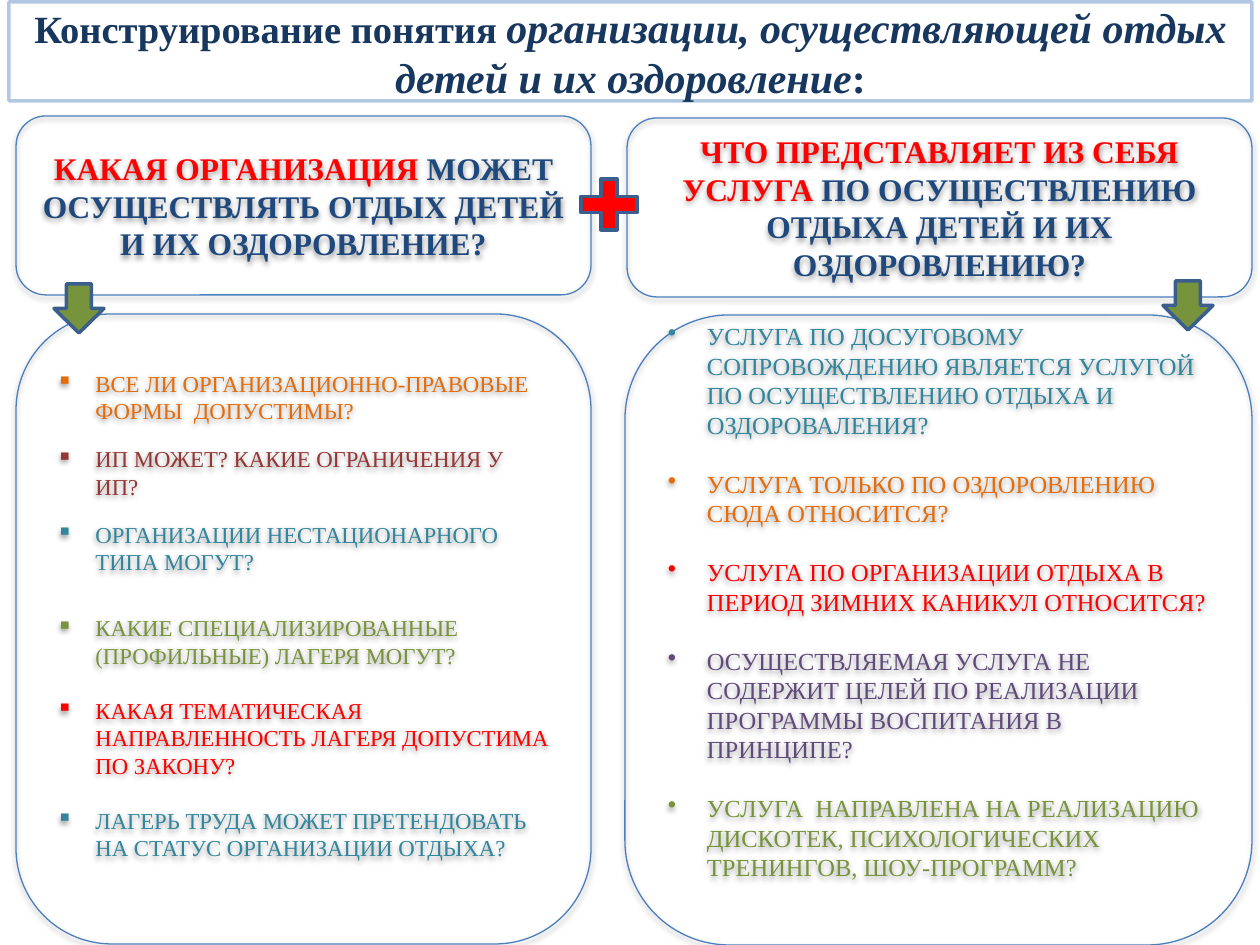
import pptx
import pptx.util
import pptx.dml.color
import pptx.enum.shapes
import pptx.enum.text
import lxml.etree

PX = 914400 / 126
SHAPES = pptx.enum.shapes.MSO_SHAPE
COLORS = {
    "white": "FFFFFF", "navy": "17375E", "blue": "1F497D", "frame": "4F81BD",
    "outline": "4B7EBC", "icon_line": "3A5F8C", "red": "FF0000",
    "orange": "E46C0A", "maroon": "953735", "teal": "31859C",
    "green": "77933C", "purple": "604A7B",
}


def rgb(name):
    return pptx.dml.color.RGBColor.from_string(COLORS[name])


def add_box(kind, bounds, fill, line, line_width, shadow=False):
    shape = slide.shapes.add_shape(kind, *[round(value * PX) for value in bounds])
    shape.shadow.inherit = False
    if fill:
        shape.fill.solid()
        shape.fill.fore_color.rgb = rgb(fill)
    else:
        shape.fill.background()
    shape.line.color.rgb = rgb(line)
    shape.line.width = pptx.util.Pt(line_width)
    shape.text_frame.word_wrap = True
    shape.text_frame.vertical_anchor = pptx.enum.text.MSO_ANCHOR.MIDDLE
    if shadow:
        effects = shape._element.spPr.find(pptx.oxml.ns.qn("a:effectLst"))
        outer = lxml.etree.SubElement(
            effects, pptx.oxml.ns.qn("a:outerShdw"),
            blurRad="40000", dist="20000", dir="5400000", rotWithShape="0")
        color = lxml.etree.SubElement(outer, pptx.oxml.ns.qn("a:srgbClr"), val="000000")
        lxml.etree.SubElement(color, pptx.oxml.ns.qn("a:alpha"), val="38000")
    return shape


presentation = pptx.Presentation()
presentation.slide_width = round(1260 * PX)
presentation.slide_height = round(945 * PX)
slide = presentation.slides.add_slide(presentation.slide_layouts[6])

title = add_box(SHAPES.RECTANGLE, (9, 2, 1243, 99), "white", "frame", 2)
frame_color = title.line._ln.find(".//" + pptx.oxml.ns.qn("a:srgbClr"))
lxml.etree.SubElement(frame_color, pptx.oxml.ns.qn("a:alpha"), val="43000")
paragraph = title.text_frame.paragraphs[0]
paragraph.alignment = pptx.enum.text.PP_ALIGN.CENTER
paragraph.font.name = "Times New Roman"
paragraph.font.bold = True
paragraph.font.color.rgb = rgb("navy")
for text, size, italic in [
    ("Конструирование понятия ", 22, False),
    ("организации, осуществляющей отдых детей и их оздоровление", 24, True),
    (":", 24, False),
]:
    run = paragraph.add_run()
    run.text = text
    run.font.size = pptx.util.Pt(size)
    run.font.italic = italic

questions = [
    ((16, 116, 575, 179), "КАКАЯ ОРГАНИЗАЦИЯ ",
     "МОЖЕТ ОСУЩЕСТВЛЯТЬ ОТДЫХ ДЕТЕЙ И ИХ ОЗДОРОВЛЕНИЕ?"),
    ((627, 118, 625, 179), "ЧТО ПРЕДСТАВЛЯЕТ ИЗ СЕБЯ УСЛУГА ",
     "ПО ОСУЩЕСТВЛЕНИЮ ОТДЫХА ДЕТЕЙ И ИХ ОЗДОРОВЛЕНИЮ?"),
]
for bounds, emphasis, remainder in questions:
    shape = add_box(SHAPES.ROUNDED_RECTANGLE, bounds, None, "outline", 0.75, True)
    paragraph = shape.text_frame.paragraphs[0]
    paragraph.alignment = pptx.enum.text.PP_ALIGN.CENTER
    paragraph.font.name = "Times New Roman"
    paragraph.font.size = pptx.util.Pt(18)
    paragraph.font.bold = True
    for text, color in [(emphasis, "red"), (remainder, "blue")]:
        run = paragraph.add_run()
        run.text = text
        run.font.color.rgb = rgb(color)

details = [
    ((16, 314, 575, 630), 13, "▪", 27, [
        ("ВСЕ ЛИ ОРГАНИЗАЦИОННО-ПРАВОВЫЕ ФОРМЫ  ДОПУСТИМЫ?", "orange", 12),
        ("ИП МОЖЕТ? КАКИЕ ОГРАНИЧЕНИЯ У ИП?", "maroon", 12),
        ("ОРГАНИЗАЦИИ НЕСТАЦИОНАРНОГО ТИПА МОГУТ?", "teal", 22),
        ("КАКИЕ СПЕЦИАЛИЗИРОВАННЫЕ (ПРОФИЛЬНЫЕ) ЛАГЕРЯ МОГУТ?", "green", 16),
        ("КАКАЯ ТЕМАТИЧЕСКАЯ НАПРАВЛЕННОСТЬ ЛАГЕРЯ ДОПУСТИМА ПО ЗАКОНУ?", "red", 16),
        ("ЛАГЕРЬ ТРУДА МОЖЕТ ПРЕТЕНДОВАТЬ НА СТАТУС ОРГАНИЗАЦИИ ОТДЫХА?", "teal", 0),
    ]),
    ((625, 315, 627, 630), 14, "•", 57, [
        ("УСЛУГА ПО ДОСУГОВОМУ СОПРОВОЖДЕНИЮ ЯВЛЯЕТСЯ УСЛУГОЙ "
         "ПО ОСУЩЕСТВЛЕНИЮ ОТДЫХА И ОЗДОРОВАЛЕНИЯ?", "teal", 17),
        ("УСЛУГА ТОЛЬКО ПО ОЗДОРОВЛЕНИЮ СЮДА ОТНОСИТСЯ?", "orange", 17),
        ("УСЛУГА ПО ОРГАНИЗАЦИИ ОТДЫХА В ПЕРИОД ЗИМНИХ КАНИКУЛ ОТНОСИТСЯ?", "red", 17),
        ("ОСУЩЕСТВЛЯЕМАЯ УСЛУГА НЕ СОДЕРЖИТ ЦЕЛЕЙ ПО РЕАЛИЗАЦИИ "
         "ПРОГРАММЫ ВОСПИТАНИЯ В ПРИНЦИПЕ?", "purple", 17),
        ("УСЛУГА  НАПРАВЛЕНА НА РЕАЛИЗАЦИЮ ДИСКОТЕК, ПСИХОЛОГИЧЕСКИХ "
         "ТРЕНИНГОВ, ШОУ-ПРОГРАММ?", "green", 0),
    ]),
]
for bounds, size, bullet, bottom, items in details:
    shape = add_box(SHAPES.ROUNDED_RECTANGLE, bounds, None, "outline", 0.75, True)
    text_frame = shape.text_frame
    text_frame.margin_top = 0
    text_frame.margin_bottom = round(bottom * PX)
    for index, (text, color, gap) in enumerate(items):
        paragraph = text_frame.add_paragraph() if index else text_frame.paragraphs[0]
        paragraph.text = text
        paragraph.alignment = pptx.enum.text.PP_ALIGN.LEFT
        paragraph.space_after = pptx.util.Pt(gap)
        paragraph.font.name = "Times New Roman"
        paragraph.font.size = pptx.util.Pt(size)
        paragraph.font.color.rgb = rgb(color)
        properties = paragraph._p.get_or_add_pPr()
        properties.set("marL", str(round(39 * PX)))
        properties.set("indent", str(round(-39 * PX)))
        marker = lxml.etree.Element(pptx.oxml.ns.qn("a:buChar"), char=bullet)
        properties.find(pptx.oxml.ns.qn("a:defRPr")).addprevious(marker)

icons = [
    (SHAPES.MATH_PLUS, (571, 170, 76, 69), "red"),
    (SHAPES.DOWN_ARROW, (54, 284, 50, 49), "green"),
    (SHAPES.DOWN_ARROW, (1163, 281, 50, 49), "green"),
]
for kind, bounds, color in icons:
    add_box(kind, bounds, color, "icon_line", 2)

presentation.save("out.pptx")
